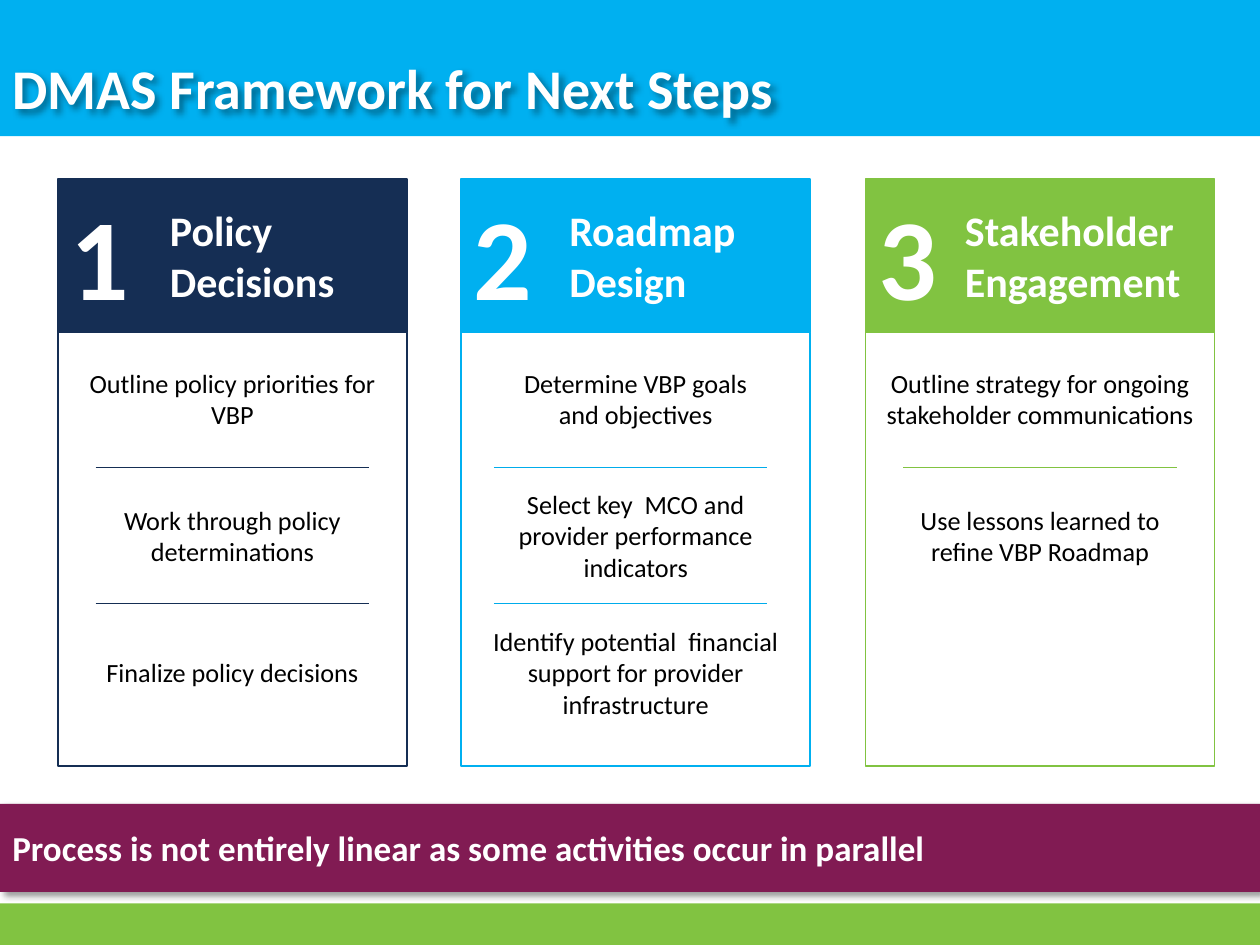
"""Build the three-column framework slide and save it as out.pptx."""
from lxml.etree import SubElement
from pptx import Presentation
from pptx.dml.color import RGBColor
from pptx.enum.shapes import MSO_CONNECTOR, MSO_SHAPE
from pptx.enum.text import MSO_ANCHOR, PP_ALIGN
from pptx.oxml.ns import qn
from pptx.util import Inches, Pt

WHITE = RGBColor(0xFF, 0xFF, 0xFF)
BLACK = RGBColor(0x00, 0x00, 0x00)
NAVY = RGBColor(0x15, 0x2E, 0x54)
BLUE = RGBColor(0x00, 0xB0, 0xF0)
RULE_BLUE = RGBColor(0x00, 0xAC, 0xEB)
GREEN = RGBColor(0x81, 0xC3, 0x41)
PLUM = RGBColor(0x81, 0x1B, 0x53)

WIDTH, HEIGHT = 10, 7.5
CARD_W, HEAD_TOP, HEAD_H, BODY_H = 2.77, 1.42, 1.22, 3.44
STEP_TOP, STEP_H, STEP_PITCH = 2.75, 0.83, 1.085
RULE_TOP, RULE_PITCH, RULE_W = 3.71, 1.08, 2.17

COLUMNS = [
    dict(left=0.46, color=NAVY, rule_color=NAVY, rule_left=0.76,
         label_left=1.25, label=["Policy", "Decisions"],
         steps=[("Outline policy priorities for VBP", 2.77),
                ("Work through policy determinations", 2.77),
                ("Finalize policy decisions", 2.74)],
         rules=2),
    dict(left=3.66, color=BLUE, rule_color=RULE_BLUE, rule_left=3.92,
         label_left=4.42, label=["Roadmap", "Design"],
         steps=[("Determine VBP goals and objectives", 2.2),
                ("Select key  MCO and provider performance indicators", 2.58),
                ("Identify potential  financial support for provider infrastructure", 2.58)],
         rules=2),
    dict(left=6.87, color=GREEN, rule_color=GREEN, rule_left=7.17,
         label_left=7.56, label=["Stakeholder", "Engagement"],
         steps=[("Outline strategy for ongoing stakeholder communications", 2.77),
                ("Use lessons learned to refine VBP Roadmap", 2.5)],
         rules=1),
]


def add_rect(s, left, top, width, height, fill=None, line=None):
    """Add a flat rectangle with an optional fill and outline."""
    sp = s.shapes.add_shape(MSO_SHAPE.RECTANGLE, Inches(left), Inches(top),
                            Inches(width), Inches(height))
    sp.shadow.inherit = False
    if fill is None:
        sp.fill.background()
    else:
        sp.fill.solid()
        sp.fill.fore_color.rgb = fill
    if line is None:
        sp.line.fill.background()
    else:
        sp.line.color.rgb = line
        sp.line.width = Pt(0.75)
    return sp


def write(sp, lines, size, color=WHITE, bold=True, align=PP_ALIGN.LEFT,
          anchor=MSO_ANCHOR.MIDDLE):
    """Write one paragraph per line into a shape."""
    tf = sp.text_frame
    tf.word_wrap = True
    tf.vertical_anchor = anchor
    for i, line in enumerate(lines):
        p = tf.paragraphs[0] if i == 0 else tf.add_paragraph()
        p.text = line
        p.alignment = align
        p.font.name = "Calibri"
        p.font.size = Pt(size)
        p.font.bold = bold
        p.font.color.rgb = color


def add_text(s, left, top, width, height, lines, size, **style):
    """Add a wrapping text box."""
    sp = s.shapes.add_textbox(Inches(left), Inches(top), Inches(width), Inches(height))
    write(sp, lines, size, **style)
    return sp


def add_shadow(sp):
    """Cast a soft shadow to the lower right."""
    sp.shadow.inherit = False
    effects = sp.element.spPr.find(qn("a:effectLst"))
    shadow = SubElement(effects, qn("a:outerShdw"), blurRad=str(Pt(4)),
                        dist=str(Pt(3)), dir=str(45 * 60000), rotWithShape="0")
    color = SubElement(shadow, qn("a:srgbClr"), val=str(BLACK))
    SubElement(color, qn("a:alpha"), val="40000")


def add_rule(s, left, top, color):
    """Add a thin horizontal divider between two steps."""
    line = s.shapes.add_connector(MSO_CONNECTOR.STRAIGHT, Inches(left), Inches(top),
                                  Inches(left + RULE_W), Inches(top))
    line.line.color.rgb = color
    line.line.width = Pt(0.75)
    SubElement(line.element.spPr, qn("a:effectLst"))


def add_column(s, number, col):
    """Add one numbered card with its steps and dividers."""
    left, color = col["left"], col["color"]
    add_rect(s, left, HEAD_TOP + HEAD_H, CARD_W, BODY_H, line=color)
    add_rect(s, left, HEAD_TOP, CARD_W, HEAD_H, fill=color, line=color)
    add_text(s, left, HEAD_TOP, 0.95, HEAD_H, [str(number)], 66, anchor=MSO_ANCHOR.TOP)
    add_text(s, col["label_left"], HEAD_TOP + 0.15, left + CARD_W - col["label_left"],
             0.91, col["label"], 24)
    for row, (step, width) in enumerate(col["steps"]):
        add_text(s, left + (CARD_W - width) / 2, STEP_TOP + row * STEP_PITCH, width,
                 STEP_H, [step], 15, color=BLACK, bold=False, align=PP_ALIGN.CENTER)
    for row in range(col["rules"]):
        add_rule(s, col["rule_left"], RULE_TOP + row * RULE_PITCH, col["rule_color"])


def main():
    """Assemble the slide."""
    prs = Presentation()
    prs.slide_width, prs.slide_height = Inches(WIDTH), Inches(HEIGHT)
    s = prs.slides.add_slide(prs.slide_layouts[6])
    add_rect(s, 0, 0, WIDTH, 1.08, fill=BLUE)
    add_rect(s, 0, HEIGHT - 0.33, WIDTH, 0.33, fill=GREEN)
    title = add_text(s, 0, 0.3, 9.5, 0.78, ["DMAS Framework for Next Steps"], 32)
    add_shadow(title)
    for number, col in enumerate(COLUMNS, 1):
        add_column(s, number, col)
    banner = add_rect(s, 0, 6.38, WIDTH, 0.7, fill=PLUM)
    add_shadow(banner)
    write(banner, ["Process is not entirely linear as some activities occur in parallel"], 20)
    prs.save("out.pptx")


if __name__ == "__main__":
    main()
